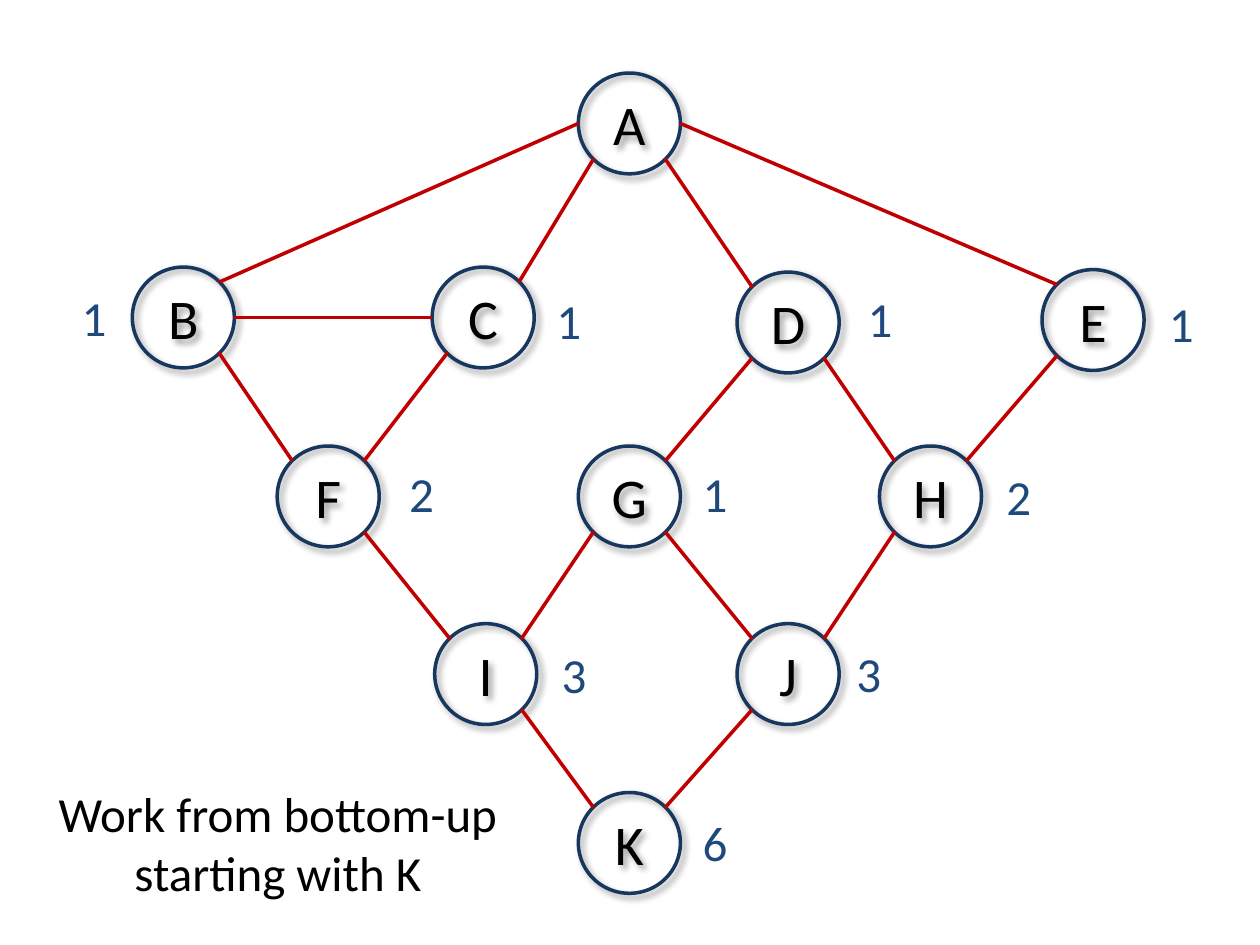
from lxml import etree
from pptx import Presentation, util as u
from pptx.dml.color import RGBColor
from pptx.enum import shapes, text
from pptx.oxml import ns

NAVY = RGBColor(0x17, 0x37, 0x5E)
BLUE = RGBColor(0x1F, 0x49, 0x7D)
RED = RGBColor(0xC0, 0x00, 0x00)
BLACK = RGBColor(0x00, 0x00, 0x00)

NODE_W, NODE_H = 0.81, 0.8
LABEL_W, LABEL_H = 0.61, 0.57

NODES = {
    "A": (4.59, 0.58),
    "B": (1.05, 2.12), "C": (3.43, 2.12), "D": (5.85, 2.16), "E": (8.27, 2.14),
    "F": (2.2, 3.54), "G": (4.59, 3.54), "H": (6.98, 3.54),
    "I": (3.45, 4.95), "J": (5.85, 4.95),
    "K": (4.59, 6.29),
}
SITES = {
    "l": (0, 0.5), "r": (1, 0.5),
    "tl": (0.15, 0.15), "tr": (0.85, 0.15),
    "bl": (0.15, 0.85), "br": (0.85, 0.85),
}
EDGES = [
    ("A", "l", "B", "tr"), ("A", "bl", "C", "tr"),
    ("A", "br", "D", "tl"), ("A", "r", "E", "tl"),
    ("B", "r", "C", "l"),
    ("B", "br", "F", "tl"), ("C", "bl", "F", "tr"),
    ("D", "bl", "G", "tr"), ("D", "br", "H", "tl"), ("E", "bl", "H", "tr"),
    ("F", "br", "I", "tl"), ("G", "bl", "I", "tr"),
    ("G", "br", "J", "tl"), ("H", "bl", "J", "tr"),
    ("I", "br", "K", "tl"), ("J", "bl", "K", "tr"),
]
COUNTS = [
    ("1", 0.44, 2.23), ("1", 4.21, 2.26), ("1", 6.68, 2.24), ("1", 9.07, 2.28),
    ("2", 3.04, 3.63), ("1", 5.37, 3.63), ("2", 7.78, 3.65),
    ("3", 4.25, 5.07), ("3", 6.59, 5.06),
    ("6", 5.37, 6.4),
]


class GraphSlide:
    font = "Calibri"
    line_width = u.Pt(2)
    node_frame = {"margin_left": 0, "margin_right": 0, "word_wrap": True,
                  "vertical_anchor": text.MSO_ANCHOR.MIDDLE}
    label_frame = {"word_wrap": True,
                   "auto_size": text.MSO_AUTO_SIZE.SHAPE_TO_FIT_TEXT}

    def __init__(self, prs):
        self.s = prs.slides.add_slide(prs.slide_layouts[6])

    def style(self, target, values):
        for name, value in values.items():
            setattr(target, name, value)

    def fill_text(self, tf, lines, size, color, frame):
        self.style(tf, frame)
        for i, line in enumerate(lines):
            p = tf.add_paragraph() if i else tf.paragraphs[0]
            p.alignment = text.PP_ALIGN.CENTER
            r = p.add_run()
            r.text = line
            self.style(r.font, {"name": self.font, "size": u.Pt(size)})
            r.font.color.rgb = color

    def stroke(self, sp, color):
        sp.line.color.rgb = color
        sp.line.width = self.line_width

    def effects(self, sp):
        return etree.SubElement(sp._element.spPr, ns.qn("a:effectLst"))

    def node(self, name, x, y):
        sp = self.s.shapes.add_shape(
            shapes.MSO_SHAPE.OVAL, u.Inches(x), u.Inches(y),
            u.Inches(NODE_W), u.Inches(NODE_H))
        sp.fill.background()
        self.stroke(sp, NAVY)
        shadow = etree.SubElement(
            self.effects(sp), ns.qn("a:outerShdw"), blurRad=str(u.Pt(4)),
            dist=str(u.Pt(3)), dir="2700000", algn="tl", rotWithShape="0")
        color = etree.SubElement(shadow, ns.qn("a:srgbClr"), val=str(BLACK))
        etree.SubElement(color, ns.qn("a:alpha"), val="40000")
        self.fill_text(sp.text_frame, [name], 32, BLACK, self.node_frame)

    def edge(self, start, start_site, end, end_site):
        points = []
        for name, site in ((start, start_site), (end, end_site)):
            x, y = NODES[name]
            fx, fy = SITES[site]
            points += [u.Inches(x + fx * NODE_W), u.Inches(y + fy * NODE_H)]
        line = self.s.shapes.add_connector(shapes.MSO_CONNECTOR.STRAIGHT, *points)
        self.stroke(line, RED)
        self.effects(line)

    def label(self, lines, x, y, w=LABEL_W, h=LABEL_H, color=BLUE):
        box = self.s.shapes.add_textbox(*map(u.Inches, (x, y, w, h)))
        self.fill_text(box.text_frame, lines, 28, color, self.label_frame)


def main():
    prs = Presentation()
    prs.slide_width, prs.slide_height = u.Inches(10), u.Inches(7.5)
    graph = GraphSlide(prs)
    for name, (x, y) in NODES.items():
        graph.node(name, x, y)
    for edge in EDGES:
        graph.edge(*edge)
    for count, x, y in COUNTS:
        graph.label([count], x, y)
    graph.label(["Work from bottom-up", "starting with K"],
                0.33, 6.17, 3.75, 1.04, BLACK)
    prs.save("out.pptx")


if __name__ == "__main__":
    main()
